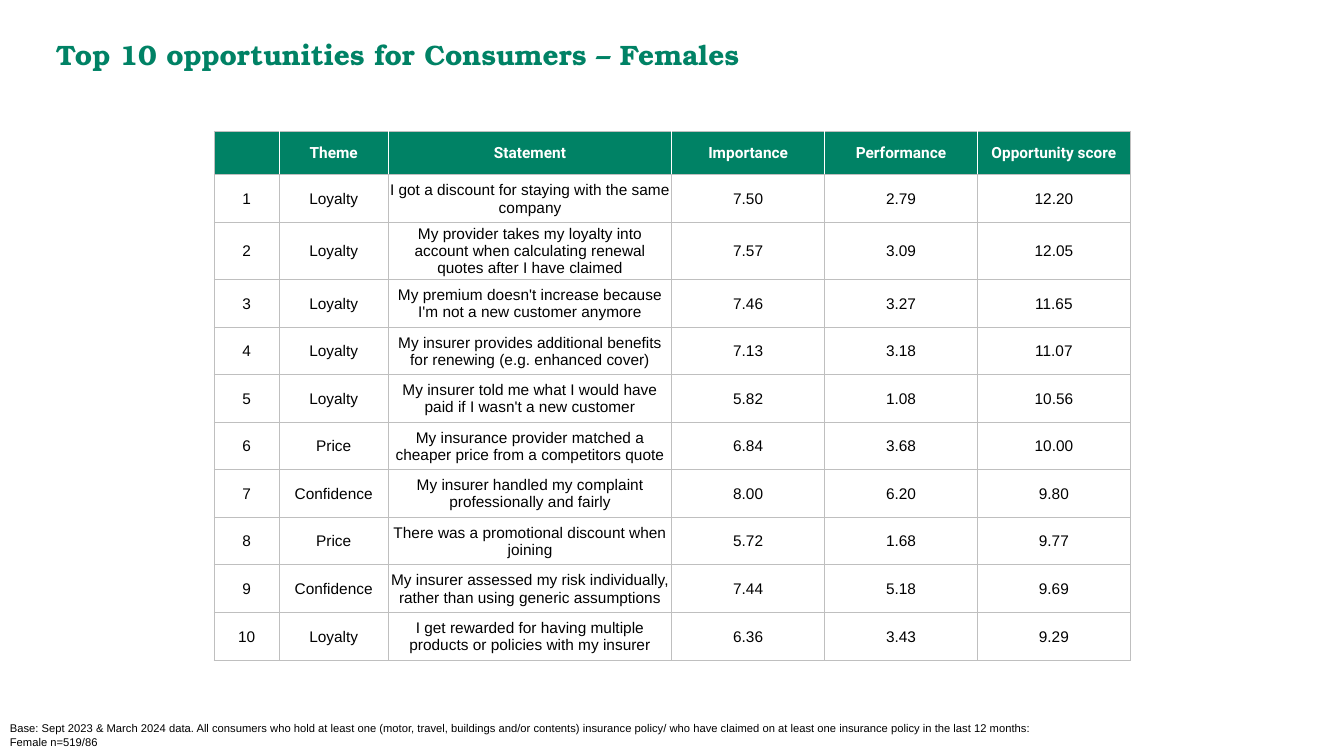
from dataclasses import dataclass

from lxml import etree
from pptx import Presentation
from pptx.dml.color import RGBColor
from pptx.enum.text import MSO_ANCHOR, PP_ALIGN
from pptx.oxml.ns import qn
from pptx.util import Pt

LEFT = PP_ALIGN.LEFT
CENTER = PP_ALIGN.CENTER
MIDDLE = MSO_ANCHOR.MIDDLE


@dataclass(frozen=True)
class Theme:
    green: str = "008265"
    white: str = "FFFFFF"
    black: str = "000000"
    grid: str = "BFBFBF"
    title_font: str = "TeX Gyre Bonum"
    header_font: str = "Roboto"
    body_font: str = "Arial"
    title_size: float = 20
    table_size: float = 11
    note_size: float = 8
    grid_width: float = 0.75
    divider_width: float = 1


HEADERS = ["", "Theme", "Statement", "Importance", "Performance", "Opportunity score"]
OPPORTUNITIES = [
    ("Loyalty", "I got a discount for staying with the same company", "7.50", "2.79", "12.20"),
    ("Loyalty", "My provider takes my loyalty into account when calculating renewal quotes after I have claimed",
     "7.57", "3.09", "12.05"),
    ("Loyalty", "My premium doesn't increase because I'm not a new customer anymore", "7.46", "3.27", "11.65"),
    ("Loyalty", "My insurer provides additional benefits for renewing (e.g. enhanced cover)",
     "7.13", "3.18", "11.07"),
    ("Loyalty", "My insurer told me what I would have paid if I wasn't a new customer", "5.82", "1.08", "10.56"),
    ("Price", "My insurance provider matched a cheaper price from a competitors quote", "6.84", "3.68", "10.00"),
    ("Confidence", "My insurer handled my complaint professionally and fairly", "8.00", "6.20", "9.80"),
    ("Price", "There was a promotional discount when joining", "5.72", "1.68", "9.77"),
    ("Confidence", "My insurer assessed my risk individually, rather than using generic assumptions",
     "7.44", "5.18", "9.69"),
    ("Loyalty", "I get rewarded for having multiple products or policies with my insurer", "6.36", "3.43", "9.29"),
]
COLUMN_WIDTHS = [46.5, 78, 202.5, 109.2, 109.2, 109.2]
HEADER_HEIGHT = 31.3
ROW_HEIGHT = 34
TALL_ROW_HEIGHT = 40.7
TALL_ROW = 2
BASE_NOTE = [
    "Base: Sept 2023 & March 2024 data. All consumers who hold at least one (motor, travel, buildings "
    "and/or contents) insurance policy/ who have claimed on at least one insurance policy in the last 12 months:",
    "Female n=519/86",
]


def write(para, text, *, font, size, color, bold=False, align=LEFT):
    para.alignment = align
    span = para.add_run()
    span.text = text
    span.font.name = font
    span.font.size = Pt(size)
    span.font.bold = bold
    span.font.color.rgb = RGBColor.from_string(color)


class SlideBuilder:
    def __init__(self, page, theme):
        self.page = page
        self.theme = theme

    def text(self, left, top, width, height, lines, **style):
        box = self.page.shapes.add_textbox(Pt(left), Pt(top), Pt(width), Pt(height))
        frame = box.text_frame
        frame.word_wrap = True
        for index, line in enumerate(lines):
            para = frame.add_paragraph() if index else frame.paragraphs[0]
            write(para, line, **style)

    def border(self, cell, side, color, width):
        properties = cell._tc.get_or_add_tcPr()
        line = etree.SubElement(properties, qn(f"a:ln{side}"), w=str(Pt(width)))
        fill = etree.SubElement(line, qn("a:solidFill"))
        etree.SubElement(fill, qn("a:srgbClr"), val=color)

    def cell(self, cell, text, is_header, dividers):
        theme = self.theme
        for side in "LRTB":
            if side in dividers:
                self.border(cell, side, theme.white, theme.divider_width)
            else:
                self.border(cell, side, theme.grid, theme.grid_width)
        if is_header:
            cell.fill.solid()
            cell.fill.fore_color.rgb = RGBColor.from_string(theme.green)
        else:
            cell.fill.background()
        cell.vertical_anchor = MIDDLE
        cell.margin_left = cell.margin_right = cell.margin_top = Pt(0.7)
        cell.margin_bottom = 0
        if text:
            write(cell.text_frame.paragraphs[0], text,
                  font=theme.header_font if is_header else theme.body_font,
                  size=theme.table_size,
                  color=theme.white if is_header else theme.black,
                  bold=is_header, align=CENTER)

    def table(self, left, top, widths, heights, rows):
        table = self.page.shapes.add_table(
            len(rows), len(widths), Pt(left), Pt(top), Pt(sum(widths)), Pt(sum(heights))).table
        table.horz_banding = False
        for column, width in zip(table.columns, widths):
            column.width = Pt(width)
        last = len(widths) - 1
        for row_index, (height, values) in enumerate(zip(heights, rows)):
            table.rows[row_index].height = Pt(height)
            is_header = row_index == 0
            for column_index, value in enumerate(values):
                dividers = ""
                if is_header:
                    dividers = ("L" if column_index else "") + ("R" if column_index < last else "")
                self.cell(table.cell(row_index, column_index), value, is_header, dividers)


def main():
    theme = Theme()
    deck = Presentation()
    deck.slide_width, deck.slide_height = Pt(960), Pt(540)
    page = deck.slides.add_slide(deck.slide_layouts[6])
    builder = SlideBuilder(page, theme)
    builder.text(33.1, 23, 884, 31.7, ["Top 10 opportunities for Consumers – Females"],
                 font=theme.title_font, size=theme.title_size, color=theme.green, bold=True)
    rows = [HEADERS] + [(str(rank), *entry) for rank, entry in enumerate(OPPORTUNITIES, 1)]
    heights = [HEADER_HEIGHT] + [ROW_HEIGHT] * len(OPPORTUNITIES)
    heights[TALL_ROW] = TALL_ROW_HEIGHT
    builder.table(152.9, 93.6, COLUMN_WIDTHS, heights, rows)
    builder.text(0, 512, 803.5, 28, BASE_NOTE,
                 font=theme.body_font, size=theme.note_size, color=theme.black)
    deck.save("out.pptx")


if __name__ == "__main__":
    main()
